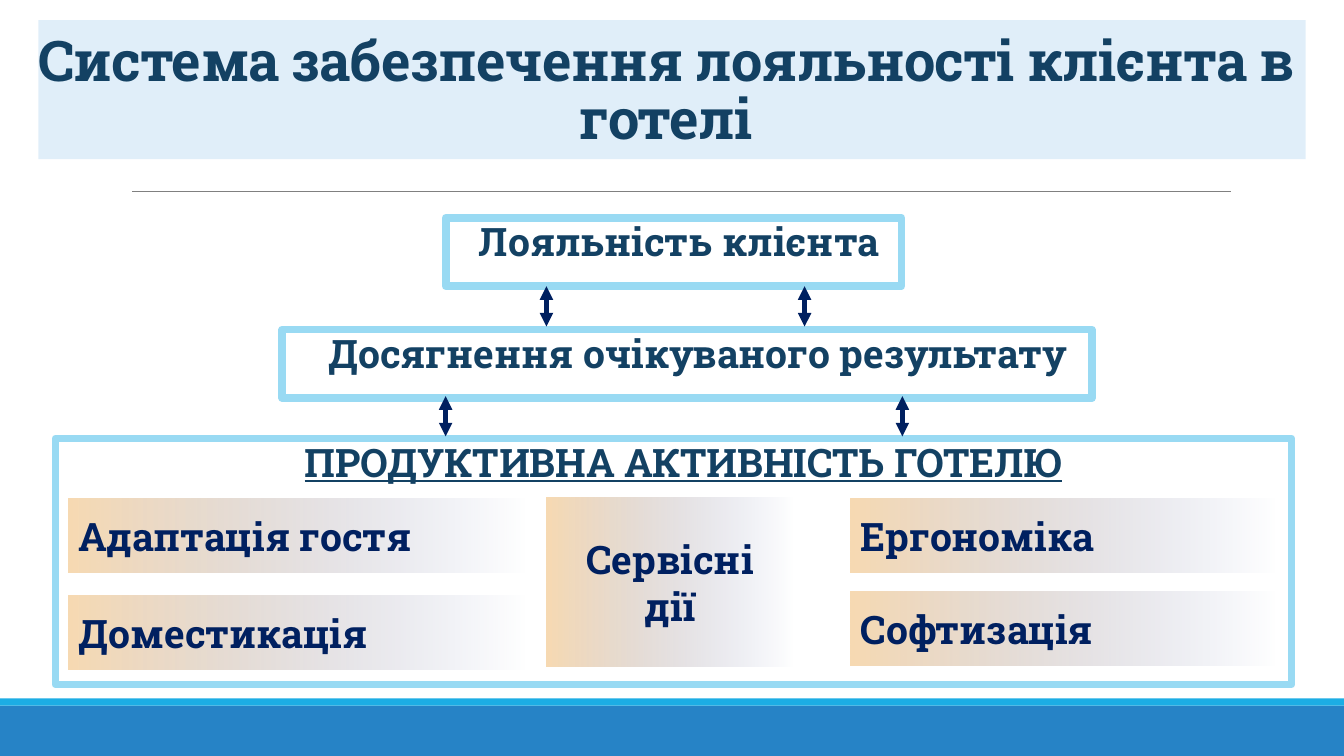
"""Build a slide on the system that secures hotel guest loyalty."""
import pptx
import pptx.util
import pptx.dml.color
import pptx.enum.shapes
import pptx.enum.text
import pptx.oxml
import pptx.oxml.ns

Inches, Pt = pptx.util.Inches, pptx.util.Pt
RECT = pptx.enum.shapes.MSO_SHAPE.RECTANGLE
STRAIGHT = pptx.enum.shapes.MSO_CONNECTOR.STRAIGHT
ALIGN, ANCHOR = pptx.enum.text.PP_ALIGN, pptx.enum.text.MSO_ANCHOR
NS = pptx.oxml.ns.nsdecls("a")
FONT, INK, NAVY = "Roboto Slab", "134163", "002060"

TITLE = "Система забезпечення лояльності клієнта в готелі"
BANDS = [
    ((0, 7, 13.33, 0.5), "2683C6", 100),
    ((0, 6.93, 13.33, 0.07), "1CADE4", 100),
    ((0.38, 0.2, 12.57, 1.38), "75B6E5", 22),
]
TIERS = [
    ("Лояльність клієнта", (4.42, 2.16, 4.52, 0.68), False),
    ("Досягнення очікуваного результату", (2.8, 3.27, 8.03, 0.68), False),
    ("ПРОДУКТИВНА АКТИВНІСТЬ ГОТЕЛЮ", (0.55, 4.35, 12.26, 2.44), True),
]
ACTIVITIES = [
    (["Адаптація гостя"], (0.68, 4.95, 4.54, 0.73), ALIGN.LEFT),
    (["Ергономіка"], (8.44, 4.95, 4.22, 0.73), ALIGN.LEFT),
    (["Софтизація"], (8.44, 5.87, 4.22, 0.73), ALIGN.LEFT),
    (["Доместикація"], (0.68, 5.91, 4.54, 0.73), ALIGN.LEFT),
    (["Сервісні", "дії"], (5.42, 4.94, 2.45, 1.67), ALIGN.CENTER),
]
ARROWS = [(2.84, (5.42, 7.98)), (3.93, (4.42, 8.95))]
ARROW_LENGTH = 0.4


def rgb(value):
    return pptx.dml.color.RGBColor.from_string(value)


def add_xml(parent, body):
    parent.append(pptx.oxml.parse_xml(body.replace("/>", f" {NS}/>", 1)))


def set_alpha(color_element, percent):
    add_xml(color_element, f'<a:alpha val="{percent * 1000}"/>')


def place(sp, box):
    sp.left, sp.top, sp.width, sp.height = map(Inches, box)


def add_rect(s, box):
    sp = s.shapes.add_shape(RECT, *map(Inches, box))
    sp.shadow.inherit = False
    sp.line.fill.background()
    return sp


def add_text(p, text, size, color, align):
    p.alignment = align
    r = p.add_run()
    r.text = text
    r.font.name, r.font.size, r.font.bold = FONT, Pt(size), True
    r.font.color.rgb = rgb(color)
    return r


def add_line(s, start, end, color, width):
    cn = s.shapes.add_connector(STRAIGHT, *map(Inches, start + end))
    cn.line.color.rgb = rgb(color)
    cn.line.width = Pt(width)
    add_xml(cn._element.spPr, "<a:effectLst/>")
    return cn


def add_bands(s):
    for i, (box, color, alpha) in enumerate(BANDS):
        sp = add_rect(s, box)
        sp.fill.solid()
        sp.fill.fore_color.rgb = rgb(color)
        set_alpha(sp._element.spPr.find(".//" + pptx.oxml.ns.qn("a:srgbClr")), alpha)
        s.shapes._spTree.insert(2 + i, sp._element)


def fill_title(sp):
    place(sp, (0.26, 0.31, 12.69, 1.71))
    tf = sp.text_frame
    tf.word_wrap, tf.vertical_anchor = True, ANCHOR.TOP
    tf.auto_size = pptx.enum.text.MSO_AUTO_SIZE.NONE
    p = tf.paragraphs[0]
    p.line_spacing = 0.85
    r = add_text(p, TITLE, 40, INK, ALIGN.CENTER)
    r._r.get_or_add_rPr().set("spc", "-50")


def fill_tier(sp, text, box, underline):
    place(sp, box)
    sp.fill.background()
    sp.line.color.rgb = rgb("99DAF3")
    sp.line.width = Pt(5.5)
    tf = sp.text_frame
    tf.word_wrap, tf.vertical_anchor = True, ANCHOR.TOP
    tf.auto_size = pptx.enum.text.MSO_AUTO_SIZE.NONE
    tf.margin_left = tf.margin_right = 0
    p = tf.paragraphs[0]
    p.line_spacing, p.space_before = 0.9, Pt(0)
    pPr = p._p.get_or_add_pPr()
    pPr.set("marL", str(Inches(0.1)))
    pPr.set("indent", str(Inches(-0.1)))
    add_xml(pPr, '<a:buChar char=" "/>')
    add_text(p, text, 28, INK, ALIGN.CENTER).font.underline = underline


def add_activity(s, lines, box, align):
    sp = add_rect(s, box)
    sp.fill.gradient()
    sp.fill.gradient_angle = 0
    for stop, color in zip(sp.fill.gradient_stops, ("F7DAB3", "A1ABD0")):
        stop.color.rgb = rgb(color)
    set_alpha(sp._element.spPr.findall(".//" + pptx.oxml.ns.qn("a:srgbClr"))[-1], 0)
    tf = sp.text_frame
    tf.word_wrap, tf.vertical_anchor = True, ANCHOR.MIDDLE
    for i, line in enumerate(lines):
        p = tf.add_paragraph() if i else tf.paragraphs[0]
        add_text(p, line, 28, NAVY, align)


def main():
    prs = pptx.Presentation()
    prs.slide_width, prs.slide_height = Inches(13.33), Inches(7.5)
    s = prs.slides.add_slide(prs.slide_layouts[1])
    add_bands(s)
    fill_title(s.shapes.title)
    add_line(s, (1.31, 1.9), (12.21, 1.9), "808080", 0.5)
    for i, (text, box, underline) in enumerate(TIERS):
        sp = add_rect(s, box) if i else s.placeholders[1]
        fill_tier(sp, text, box, underline)
    for activity in ACTIVITIES:
        add_activity(s, *activity)
    for top, columns in ARROWS:
        for x in columns:
            cn = add_line(s, (x, top), (x, top + ARROW_LENGTH), NAVY, 3.25)
            for end in ("headEnd", "tailEnd"):
                add_xml(cn.line._get_or_add_ln(), f'<a:{end} type="triangle"/>')
    prs.save("out.pptx")


if __name__ == "__main__":
    main()
